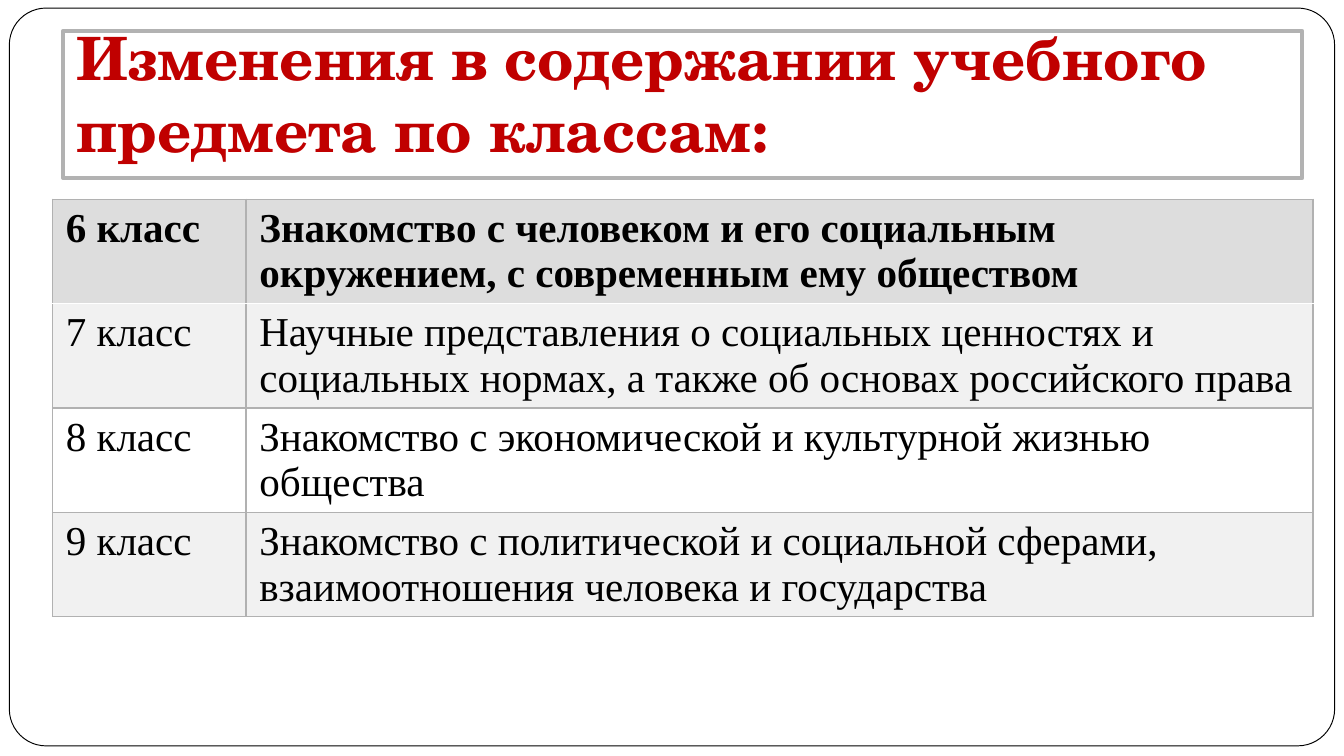
from pptx import Presentation
from pptx.dml.color import RGBColor
from pptx.enum.shapes import MSO_SHAPE as Shape
from pptx.enum.text import MSO_ANCHOR as Anchor, PP_ALIGN as Align
from pptx.oxml import parse_xml
from pptx.oxml.ns import nsdecls
from pptx.util import Pt

COLORS = {
    "paper": "FFFFFF", "ink": "000000", "title": "C00000", "frame": "B2B2B2",
    "grid": "B1B1B1", "header": "DDDDDD", "band": "F1F1F1",
}
TITLE = "Изменения в содержании учебного предмета по классам:"
ROWS = [
    ("6 класс", "Знакомство с человеком и его социальным окружением, "
                "с современным ему обществом"),
    ("7 класс", "Научные представления о социальных ценностях и социальных "
                "нормах, а также об основах российского права"),
    ("8 класс", "Знакомство с экономической и культурной жизнью общества"),
    ("9 класс", "Знакомство с политической и социальной сферами, "
                "взаимоотношения человека и государства"),
]


def color(name):
    return RGBColor.from_string(COLORS[name])


def style_text(text_frame, font_name, size, color_name, bold):
    for para in text_frame.paragraphs:
        para.alignment = Align.LEFT
        for span in para.runs:
            span.font.name = font_name
            span.font.size = Pt(size)
            span.font.bold = bold
            span.font.color.rgb = color(color_name)


def add_panel(page, box, preset, line_name, line_width):
    panel = page.shapes.add_shape(preset, *map(Pt, box))
    panel.shadow.inherit = False
    panel.fill.solid()
    panel.fill.fore_color.rgb = color("paper")
    panel.line.color.rgb = color(line_name)
    panel.line.width = Pt(line_width)
    return panel


def add_page_frame(page, box):
    frame = add_panel(page, box, Shape.ROUNDED_RECTANGLE, "ink", 0.5)
    frame.adjustments[0] = 0.05


def add_title(page, box):
    panel = add_panel(page, box, Shape.RECTANGLE, "frame", 2.25)
    text_frame = panel.text_frame
    text_frame.word_wrap = True
    text_frame.vertical_anchor = Anchor.BOTTOM
    text_frame.margin_left = text_frame.margin_right = Pt(7.2)
    text_frame.margin_top, text_frame.margin_bottom = Pt(3.6), Pt(7.2)
    text_frame.text = TITLE
    style_text(text_frame, "TeX Gyre Schola", 32, "title", True)


def set_borders(cell, edges):
    """Draw edges, a dict of side letter to (color name, width); the fill must come later."""
    properties = cell._tc.get_or_add_tcPr()
    for side, (name, width) in edges.items():
        properties.append(parse_xml(
            f'<a:ln{side} {nsdecls("a")} w="{Pt(width)}"><a:solidFill>'
            f'<a:srgbClr val="{COLORS[name]}"/></a:solidFill></a:ln{side}>'))


def add_class_table(page, box, first_width):
    left, top, width, height = box
    table = page.shapes.add_table(len(ROWS), 2, *map(Pt, box)).table
    table.columns[0].width = Pt(first_width)
    table.columns[1].width = Pt(width - first_width)
    for index, texts in enumerate(ROWS):
        table.rows[index].height = Pt(height / len(ROWS))
        edges = dict.fromkeys("LRTB", ("grid", 0.75))
        if index == 0:
            edges["B"] = ("paper", 1)
        elif index == 1:
            edges["T"] = ("paper", 1)
        fill_name = "header" if index == 0 else "band" if index % 2 else None
        for column, text in enumerate(texts):
            cell = table.cell(index, column)
            set_borders(cell, edges)
            if fill_name:
                cell.fill.solid()
                cell.fill.fore_color.rgb = color(fill_name)
            else:
                cell.fill.background()
            cell.text_frame.text = text
            style_text(cell.text_frame, "Times New Roman", 22, "ink", index == 0)


def main():
    deck = Presentation()
    deck.slide_width, deck.slide_height = Pt(720), Pt(405)
    page = deck.slides.add_slide(deck.slide_layouts[6])
    add_page_frame(page, (5, 4.3, 710, 395.3))
    add_title(page, (33.8, 16.6, 663.8, 78.8))
    add_class_table(page, (28.1, 106.7, 675.3, 223.6), 103.7)
    deck.save("out.pptx")


if __name__ == "__main__":
    main()
